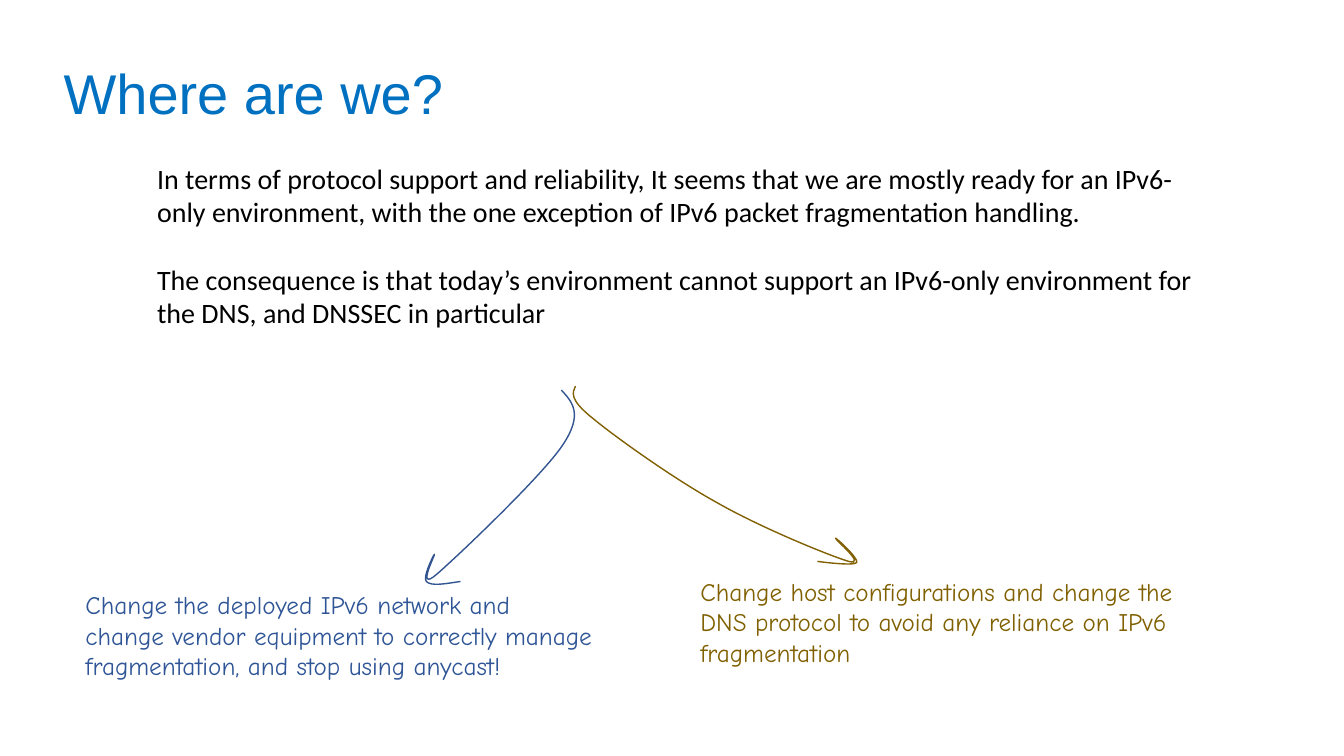
from dataclasses import dataclass

from lxml.etree import SubElement
from pptx import Presentation
from pptx.dml.color import RGBColor
from pptx.enum.text import MSO_ANCHOR, MSO_AUTO_SIZE, PP_ALIGN
from pptx.oxml.ns import qn
from pptx.util import Pt


@dataclass(frozen=True)
class Theme:
    title_color: str = "0070C0"
    body_color: str = "000000"
    network_color: str = "2F5597"
    network_line: str = "325491"
    host_color: str = "806000"
    title_font: str = "Arial"
    body_font: str = "Calibri"
    note_font: str = "Comic Neue"
    title_size: float = 40
    body_size: float = 20
    note_size: float = 18
    paragraph_gap: float = 24
    line_width: float = 1


def write_text(frame, *paragraphs, font, size, color, gap=0, wrap=True):
    frame.word_wrap = wrap
    frame.auto_size = MSO_AUTO_SIZE.SHAPE_TO_FIT_TEXT
    frame.vertical_anchor = MSO_ANCHOR.TOP
    for index, text in enumerate(paragraphs):
        para = frame.add_paragraph() if index else frame.paragraphs[0]
        para.alignment = PP_ALIGN.LEFT
        para.space_before = Pt(gap if index else 0)
        span = para.add_run()
        span.text = text
        span.font.name = font
        span.font.size = Pt(size)
        span.font.color.rgb = RGBColor.from_string(color)


class SlideBuilder:
    def __init__(self, deck, theme):
        self.theme = theme
        self.page = deck.slides.add_slide(deck.slide_layouts[5])

    def place(self, shape, at):
        shape.left, shape.top, shape.width, shape.height = map(Pt, at)

    def title(self, text, at):
        box = self.page.shapes.title
        self.place(box, at)
        write_text(box.text_frame, text, font=self.theme.title_font,
                   size=self.theme.title_size, color=self.theme.title_color,
                   wrap=False)

    def text(self, *paragraphs, at, **style):
        box = self.page.shapes.add_textbox(*map(Pt, at))
        write_text(box.text_frame, *paragraphs, **style)

    def note(self, text, at, color):
        self.text(text, at=at, font=self.theme.note_font,
                  size=self.theme.note_size, color=color)

    def sketched_arrow(self, knots, at, color):
        """Draw joined cubic curves: a start, then three points per curve."""
        left, top, width, height = at
        builder = self.page.shapes.build_freeform(*map(Pt, knots[0]))
        builder.add_line_segments([(Pt(x), Pt(y)) for x, y in knots[3::3]],
                                  close=False)
        arrow = builder.convert_to_shape()
        self.place(arrow, at)

        # Turn the straight segments into cubic curves
        outline = arrow.element.xpath(".//a:path")[0]
        outline.set("w", str(Pt(width)))
        outline.set("h", str(Pt(height)))
        for segment in list(outline):
            outline.remove(segment)
        curves = [knots[i:i + 3] for i in range(1, len(knots), 3)]
        for tag, points in [("a:moveTo", knots[:1])] + [
                ("a:cubicBezTo", curve) for curve in curves]:
            segment = SubElement(outline, qn(tag))
            for x, y in points:
                SubElement(segment, qn("a:pt"),
                           x=str(Pt(x - left)), y=str(Pt(y - top)))

        arrow.shadow.inherit = False
        arrow.fill.background()
        arrow.line.color.rgb = RGBColor.from_string(color)
        arrow.line.width = Pt(self.theme.line_width)


# Arrow strokes: the shaft first, then the hooks of the head
NETWORK_ARROW = [
    (401, 278.6),
    (409, 287.3), (416.9, 295.9), (401.8, 318.2),
    (387.4, 339.8), (326.9, 397.4), (311.8, 410.4),
    (296.6, 423.4), (311.8, 394.6), (310.3, 396),
    (309.6, 396.7), (301.7, 412.6), (304.6, 415.4),
    (308.2, 419), (318.2, 416.9), (329, 415.4),
]
HOST_ARROW = [
    (411.1, 275.8),
    (409, 280.1), (406.1, 285.1), (423.4, 298.8),
    (439.9, 312.5), (482.4, 342.7), (512.6, 359.3),
    (542.9, 376.6), (591.8, 396.7), (606.2, 401),
    (619.9, 404.6), (595.4, 384.5), (596.9, 384.5),
    (597.6, 384.5), (613.4, 398.9), (612, 401.8),
    (609.8, 404.6), (583.9, 401), (583.9, 401),
]


def main():
    deck = Presentation()
    deck.slide_width, deck.slide_height = Pt(960), Pt(540)
    theme = Theme()
    slide = SlideBuilder(deck, theme)

    # Title and statement
    slide.title("Where are we?", (38.2, 38.2, 331.2, 55.4))
    slide.text(
        "In terms of protocol support and reliability, It seems that we are "
        "mostly ready for an IPv6-only environment, with the one exception of "
        "IPv6 packet fragmentation handling.",
        "The consequence is that today’s environment cannot support an "
        "IPv6-only environment for the DNS, and DNSSEC in particular",
        at=(105.1, 111.6, 766.8, 152.6), font=theme.body_font,
        size=theme.body_size, color=theme.body_color, gap=theme.paragraph_gap)

    # Arrows to the two options
    slide.sketched_arrow(NETWORK_ARROW, (303.8, 278.6, 105.8, 139),
                         theme.network_line)
    slide.sketched_arrow(HOST_ARROW, (409.7, 275.8, 202.3, 126.7),
                         theme.host_color)

    # The two options
    slide.note(
        "Change the deployed IPv6 network and change vendor equipment to "
        "correctly manage fragmentation, and stop using anycast!",
        (54, 417.6, 377.3, 94.3), theme.network_color)
    slide.note(
        "Change host configurations and change the DNS protocol to avoid any "
        "reliance on IPv6 fragmentation",
        (493.2, 408.2, 377.3, 72.7), theme.host_color)

    deck.save("out.pptx")


if __name__ == "__main__":
    main()
